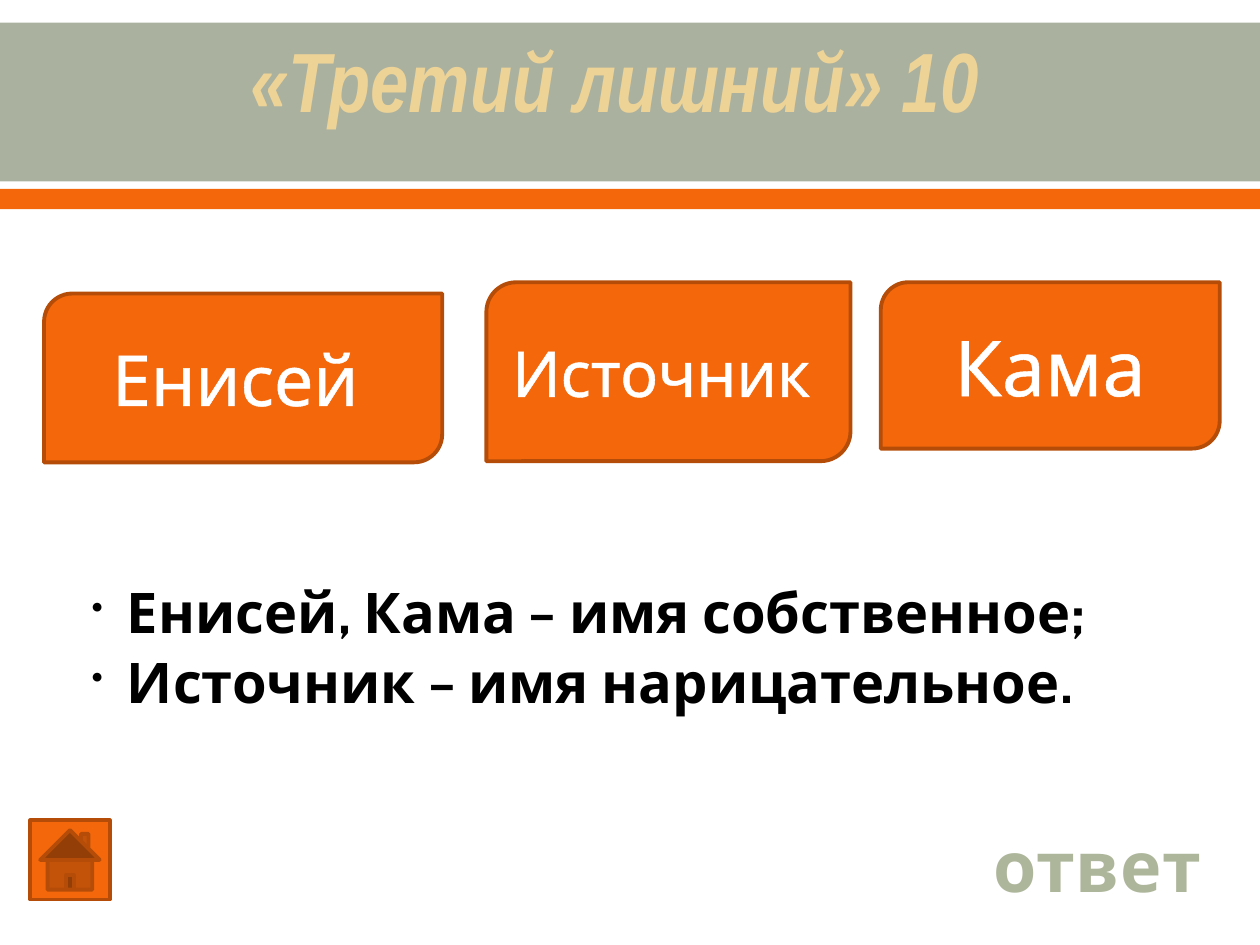
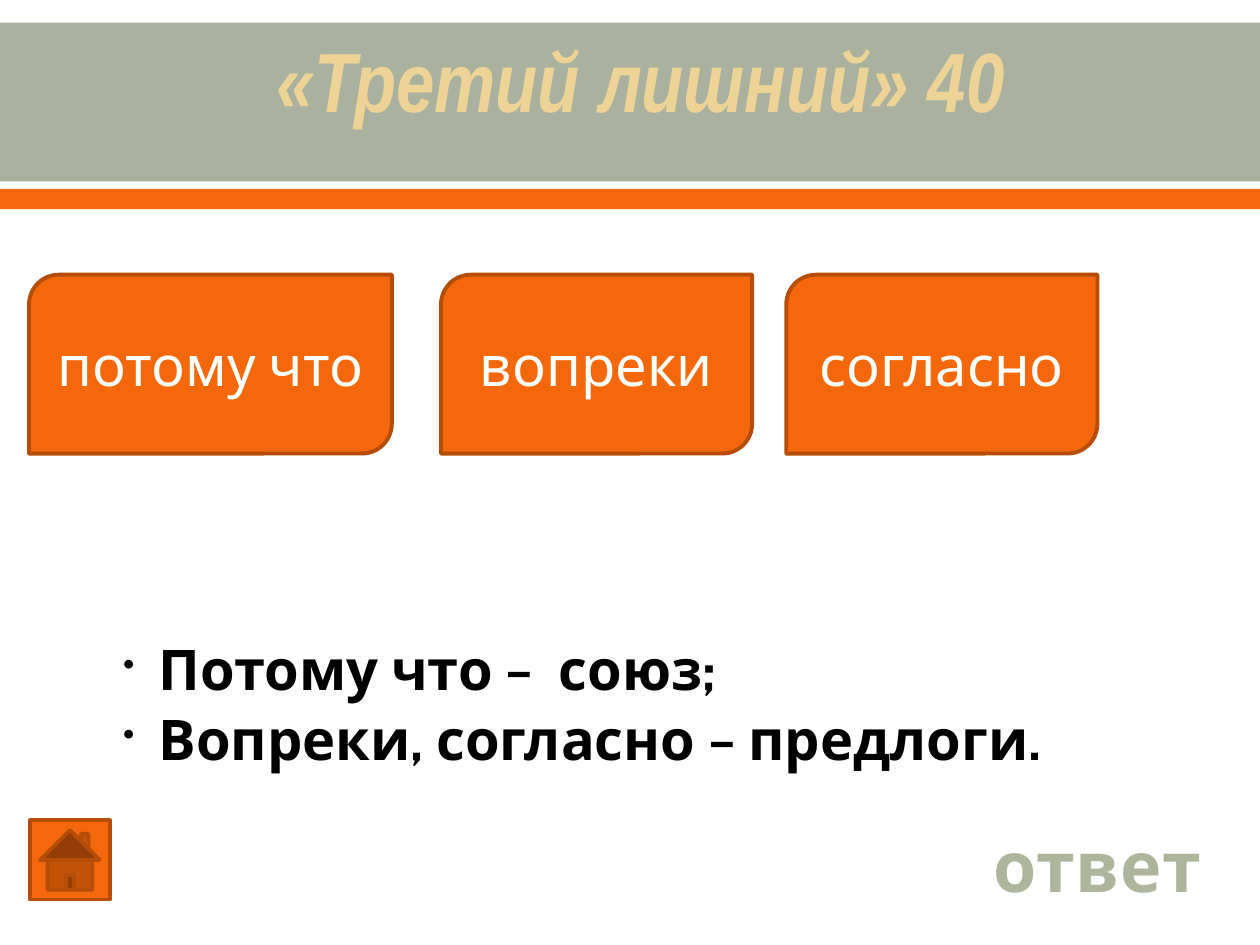
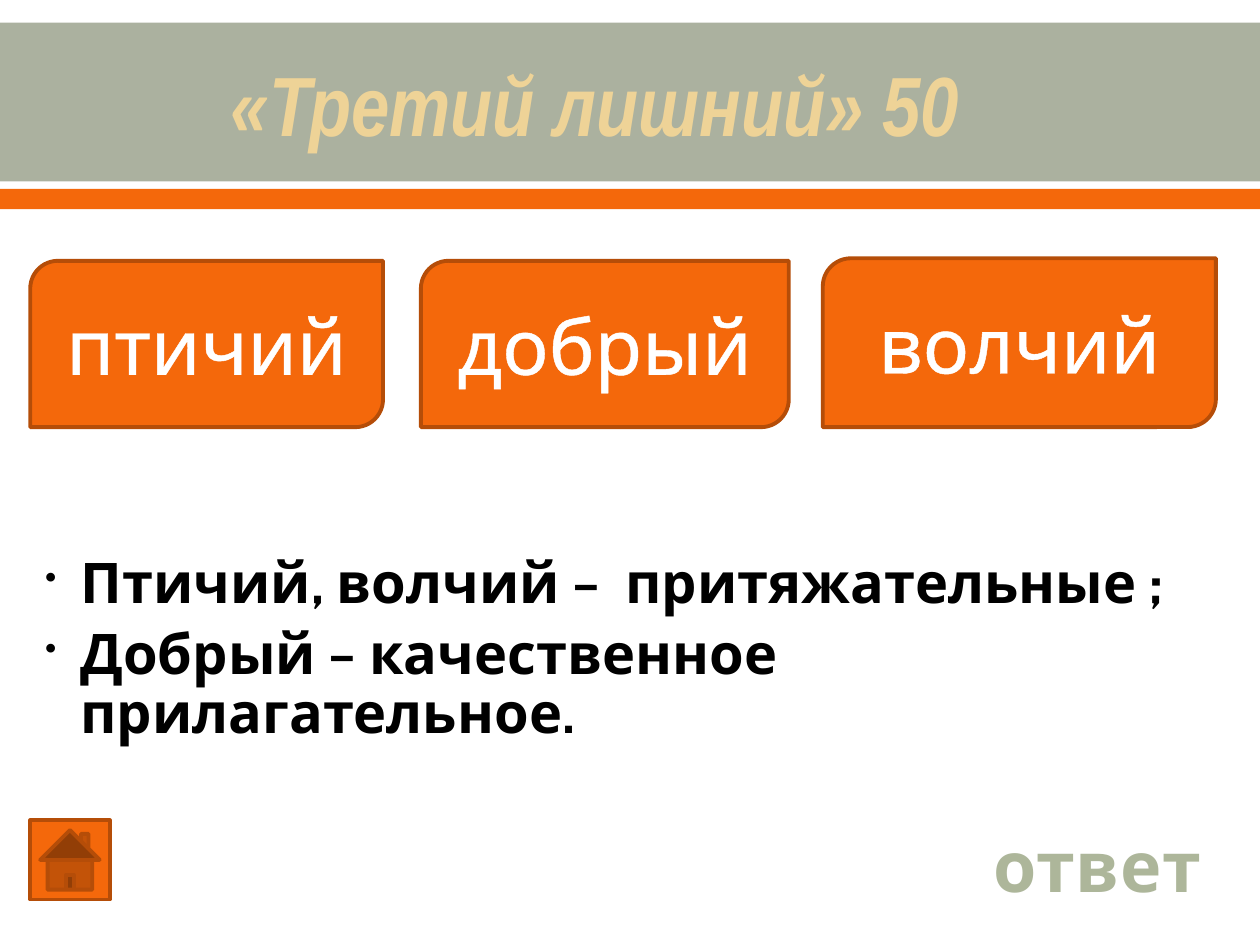
import pptx
import pptx.dml.color
import pptx.enum.shapes
import pptx.enum.text
import pptx.oxml
import pptx.oxml.ns
import pptx.util

SHAPES = pptx.enum.shapes.MSO_SHAPE
CENTER = pptx.enum.text.PP_ALIGN.CENTER
MIDDLE = pptx.enum.text.MSO_ANCHOR.MIDDLE
ORANGE, RUST, SAGE, SAND = "F4680B", "B54D08", "ABB19F", "EED397"
WHITE, BLACK = "FFFFFF", "000000"

prs = pptx.Presentation()
prs.slide_width = pptx.util.Inches(10)
prs.slide_height = pptx.util.Inches(7.5)

# Grid of 100 columns by 75 rows; every place is (column, row, columns, rows)
COLUMN = prs.slide_width / 100
ROW = prs.slide_height / 75


def color(hex_code):
    return pptx.dml.color.RGBColor.from_string(hex_code)


def add_part(slide, place, kind=None, fill=None, border=None):
    """Add a preset shape, or a text box when no kind is given."""
    left, top, width, height = place
    frame = [round(n) for n in (left * COLUMN, top * ROW, width * COLUMN, height * ROW)]
    if kind is None:
        part = slide.shapes.add_textbox(*frame)
    else:
        part = slide.shapes.add_shape(kind, *frame)
        part.shadow.inherit = False
        part.fill.solid()
        part.fill.fore_color.rgb = color(fill)
        if border:
            part.line.color.rgb = color(border)
            part.line.width = pptx.util.Pt(2.22)
        else:
            part.line.fill.background()
    part.text_frame.word_wrap = True
    part.text_frame.vertical_anchor = MIDDLE
    return part


# Each question: title and place, cards (word, place, size), card outline, explanation
questions = [
    ("«Третий лишний» 10", (5.1, 1.3, 87.4, 10),
     [("Енисей ", (3.5, 23.3, 31.6, 13.4), 40),
      ("Источник ", (38.6, 22.4, 28.9, 14.2), 36),
      ("Кама", (69.9, 22.4, 26.9, 13.2), 44)], True,
     (6.1, 43, 86.6, 17.3),
     ["Енисей, Кама – имя собственное;", "Источник – имя нарицательное."]),
    ("«Третий лишний» 40", (5.1, 1.3, 91.5, 10),
     [("потому что", (2.3, 21.8, 28.8, 14.2), 32),
      ("вопреки", (35, 21.8, 24.7, 14.2), 32),
      ("согласно", (62.4, 21.8, 24.7, 14.2), 32)], False,
     (8.6, 47.5, 86.6, 17.3),
     ["Потому что –  союз;", "Вопреки, согласно – предлоги."]),
    (" «Третий лишний» 50", (7.5, 3.2, 78, 10),
     [("птичий", (2.4, 20.7, 28, 13.2), 44),
      ("добрый", (33.4, 20.7, 29.2, 13.2), 44),
      ("волчий", (65.3, 20.5, 31.2, 13.4), 44)], True,
     (2.4, 43, 96.5, 17.3),
     ["Птичий, волчий –  притяжательные ;", "Добрый – качественное прилагательное."]),
]

for title, title_place, cards, cards_outlined, notes_place, explanation in questions:
    slide = prs.slides.add_slide(prs.slide_layouts[6])
    outlined = []

    # Header bands
    add_part(slide, (0, 1.8, 100, 12.6), SHAPES.RECTANGLE, SAGE)
    add_part(slide, (0, 15, 100, 1.6), SHAPES.RECTANGLE, ORANGE)

    # Title
    heading = add_part(slide, title_place).text_frame.paragraphs[0]
    heading.text = title
    heading.alignment = CENTER
    font = heading.runs[0].font
    font.name, font.size = "Arial Narrow", pptx.util.Pt(48)
    font.bold = font.italic = True
    font.color.rgb = color(SAND)
    outlined.append((heading.runs[0], 1.1))

    # Home button
    add_part(slide, (2.4, 65.1, 6.3, 6.3), SHAPES.ACTION_BUTTON_HOME, ORANGE, RUST)

    # Answer label
    answer_frame = add_part(slide, (77.6, 64.8, 19, 7.7)).text_frame
    answer_frame.word_wrap = False
    answer_frame.vertical_anchor = pptx.enum.text.MSO_ANCHOR.TOP
    answer_frame.auto_size = pptx.enum.text.MSO_AUTO_SIZE.SHAPE_TO_FIT_TEXT
    answer = answer_frame.paragraphs[0]
    answer.text = "ответ"
    answer.alignment = CENTER
    font = answer.runs[0].font
    font.name, font.size, font.bold = "Cabin", pptx.util.Pt(40), True
    font.fill.gradient()
    font.fill.gradient_angle = 270
    for stop, (position, shade) in zip(font.fill.gradient_stops, [(0.25, "ADB69A"), (1, "7A816C")]):
        stop.position = position
        stop.color.rgb = color(shade)
    answer.runs[0]._r.get_or_add_rPr().set("spc", "50")

    # Word cards
    for word, card_place, size in cards:
        card = add_part(slide, card_place, SHAPES.ROUND_2_DIAG_RECTANGLE, ORANGE, RUST)
        label = card.text_frame.paragraphs[0]
        label.text = word
        label.alignment = CENTER
        font = label.runs[0].font
        font.name, font.size = "Cabin", pptx.util.Pt(size)
        font.color.rgb = color(WHITE)
        if cards_outlined:
            outlined.append((label.runs[0], 1.45))

    # Explanation
    notes = add_part(slide, notes_place).text_frame
    notes.text = "\n".join(explanation)
    for index, point in enumerate(notes.paragraphs):
        properties = point._p.get_or_add_pPr()
        properties.set("marL", str(pptx.util.Inches(0.3)))
        properties.set("indent", str(pptx.util.Inches(-0.28)))
        for tag, key, value in [("buSzPct", "val", "60000"), ("buChar", "char", "•")]:
            bullet = properties.makeelement(pptx.oxml.ns.qn(f"a:{tag}"), {key: value})
            properties.append(bullet)
        point.line_spacing = 0.88
        point.space_before = pptx.util.Pt(6.4 if index else 0)
        font = point.runs[0].font
        font.name, font.size, font.bold = "Cabin", pptx.util.Pt(32), True
        font.color.rgb = color(BLACK)

    # White outlines around letters
    for run, width in outlined:
        run._r.get_or_add_rPr().insert(0, pptx.oxml.parse_xml(
            f'<a:ln {pptx.oxml.ns.nsdecls("a")} w="{pptx.util.Pt(width)}">'
            f'<a:solidFill><a:srgbClr val="{WHITE}"/></a:solidFill></a:ln>'))

prs.save("out.pptx")
